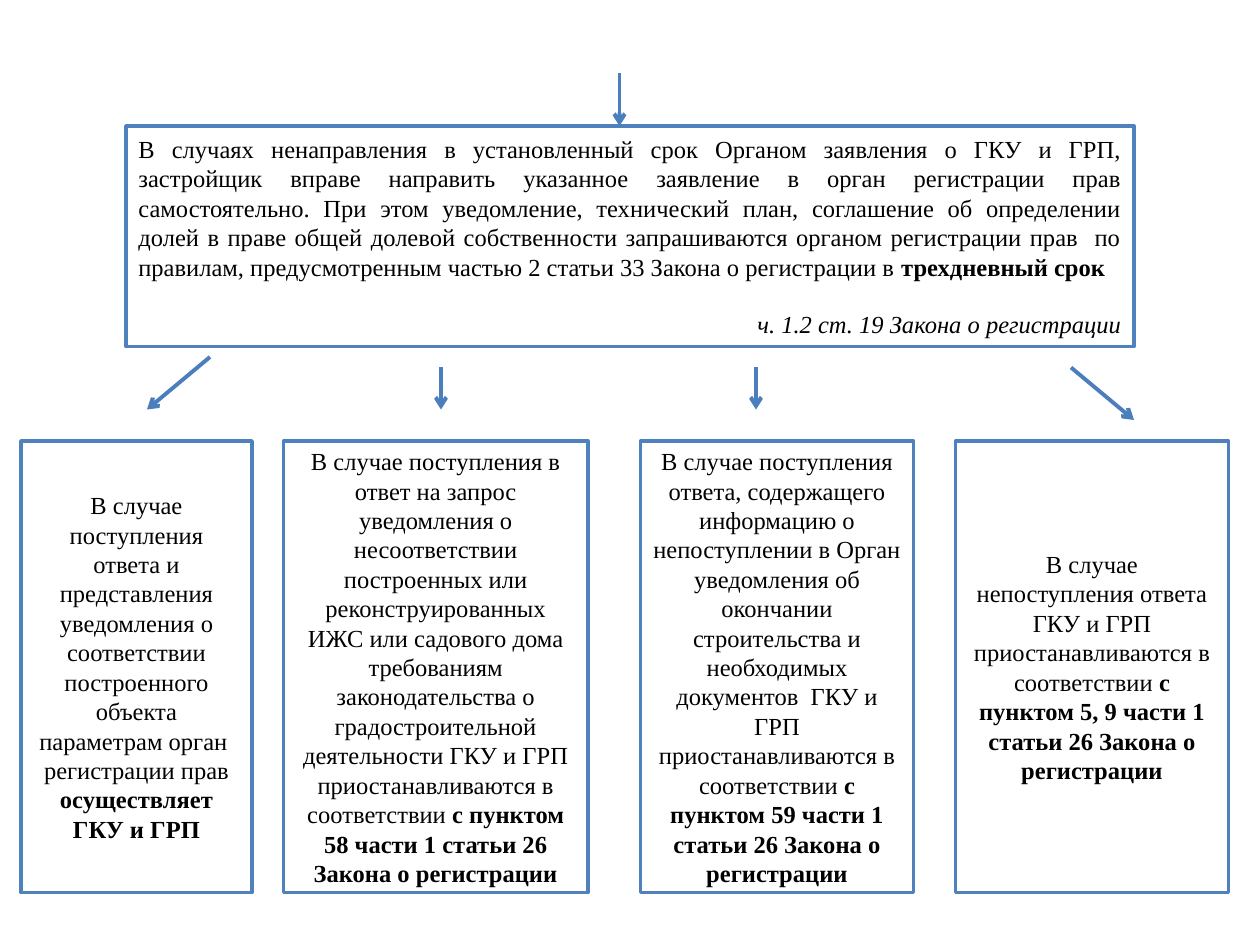
from dataclasses import dataclass

from lxml.etree import SubElement
from pptx import Presentation
from pptx.dml.color import RGBColor
from pptx.enum.shapes import MSO_CONNECTOR, MSO_SHAPE
from pptx.enum.text import MSO_ANCHOR, PP_ALIGN
from pptx.oxml.ns import qn
from pptx.util import Pt

PX = 9525  # 96 px to the inch


@dataclass(frozen=True)
class Theme:
    paper: RGBColor = RGBColor(0xFF, 0xFF, 0xFF)
    ink: RGBColor = RGBColor(0, 0, 0)
    border: RGBColor = RGBColor(0x4F, 0x81, 0xBD)
    arrow: RGBColor = RGBColor(0x4B, 0x7E, 0xBC)
    font: str = "Times New Roman"
    size: float = 14
    border_width: float = 2
    arrow_width: float = 2.25


theme = Theme()

deck = Presentation()
deck.slide_width, deck.slide_height = 960 * PX, 720 * PX
page = deck.slides.add_slide(deck.slide_layouts[6])


def add_text(para, text, *, bold=False, italic=False, align=PP_ALIGN.CENTER):
    para.alignment = align
    span = para.add_run()
    span.text = text
    span.font.name = theme.font
    span.font.size = Pt(theme.size)
    span.font.color.rgb = theme.ink
    span.font.bold = bold
    span.font.italic = italic


def add_box(left, top, width, height):
    """Add a bordered rectangle and return its text frame."""
    box = page.shapes.add_shape(
        MSO_SHAPE.RECTANGLE, left * PX, top * PX, width * PX, height * PX)
    box.shadow.inherit = False
    box.fill.solid()
    box.fill.fore_color.rgb = theme.paper
    box.line.color.rgb = theme.border
    box.line.width = Pt(theme.border_width)
    box.text_frame.word_wrap = True
    box.text_frame.vertical_anchor = MSO_ANCHOR.MIDDLE
    return box.text_frame


# The general rule
rule = add_box(96, 96, 768, 168)
body = rule.paragraphs[0]
add_text(
    body,
    "В случаях ненаправления в установленный срок Органом заявления о ГКУ и ГРП, "
    "застройщик вправе направить указанное заявление в орган регистрации прав "
    "самостоятельно. При этом уведомление, технический план, соглашение об "
    "определении долей в праве общей долевой собственности запрашиваются органом "
    "регистрации прав  по правилам, предусмотренным частью 2 статьи 33 Закона о "
    "регистрации в ",
    align=PP_ALIGN.JUSTIFY)
add_text(body, "трехдневный срок", bold=True, align=PP_ALIGN.JUSTIFY)
citation = rule.add_paragraph()
citation.space_before = Pt(16)
add_text(citation, "ч. 1.2 ст. 19 Закона о регистрации", italic=True, align=PP_ALIGN.RIGHT)

# The four outcomes: left, width, circumstances, consequence
outcomes = [
    (16, 176,
     "В случае поступления ответа и представления уведомления о соответствии "
     "построенного объекта параметрам орган  регистрации прав ",
     "осуществляет ГКУ и ГРП"),
    (216, 232,
     "В случае поступления в ответ на запрос уведомления о несоответствии "
     "построенных или реконструированных ИЖС или садового дома требованиям "
     "законодательства о градостроительной деятельности ГКУ и ГРП "
     "приостанавливаются в соответствии ",
     "с пунктом 58 части 1 статьи 26 Закона о регистрации"),
    (488, 208,
     "В случае поступления ответа, содержащего информацию о непоступлении в Орган "
     "уведомления об окончании строительства и необходимых документов  ГКУ и ГРП "
     "приостанавливаются в соответствии ",
     "с пунктом 59 части 1 статьи 26 Закона о регистрации"),
    (728, 208,
     "В случае непоступления ответа ГКУ и ГРП приостанавливаются в соответствии ",
     "с пунктом 5, 9 части 1 статьи 26 Закона о регистрации"),
]
for left, width, circumstances, consequence in outcomes:
    para = add_box(left, 336, width, 344).paragraphs[0]
    add_text(para, circumstances)
    add_text(para, consequence, bold=True)

# Arrows into the rule and out to the outcomes
arrows = [
    (472, 56, 472, 96),
    (160, 272, 112, 312),
    (336, 280, 336, 312),
    (576, 280, 576, 312),
    (816, 280, 864, 320),
]
for ends in arrows:
    arrow = page.shapes.add_connector(MSO_CONNECTOR.STRAIGHT, *(end * PX for end in ends))
    arrow.line.color.rgb = theme.arrow
    arrow.line.width = Pt(theme.arrow_width)
    SubElement(arrow.line._get_or_add_ln(), qn("a:tailEnd"), type="arrow")
    SubElement(arrow._element.spPr, qn("a:effectLst"))

deck.save("out.pptx")
